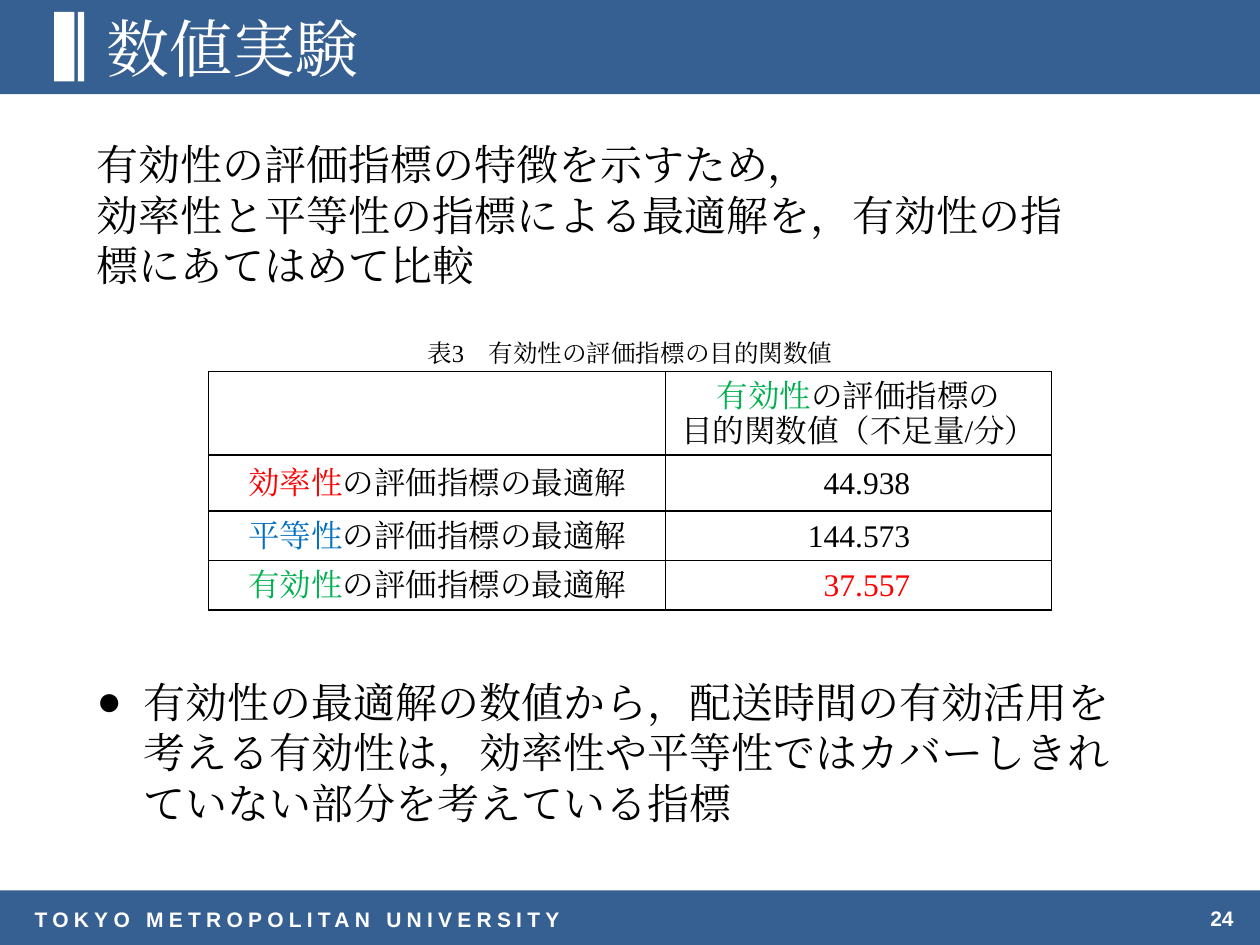
from dataclasses import dataclass
from typing import Optional

from lxml.etree import SubElement as Sub
from pptx import Presentation
from pptx.dml.color import RGBColor as Rgb
from pptx.enum.shapes import MSO_SHAPE as Shape
from pptx.enum.text import MSO_ANCHOR as Anchor, PP_ALIGN as Align
from pptx.oxml.ns import qn
from pptx.util import Cm, Pt


@dataclass(frozen=True)
class Theme:
    navy: str = "376092"
    white: str = "FFFFFF"
    black: str = "000000"
    red: str = "FF0000"
    blue: str = "0070C0"
    green: str = "00B050"
    serif: str = "Times New Roman"
    sans: str = "Arial"
    title: int = 36
    body: int = 24
    cell: int = 18
    note: int = 14
    foot: int = 12


@dataclass(frozen=True)
class Box:
    left: float
    top: float
    width: float
    height: float

    def dims(self) -> tuple:
        return Cm(self.left), Cm(self.top), Cm(self.width), Cm(self.height)


@dataclass(frozen=True)
class Run:
    text: str
    color: str


@dataclass(frozen=True)
class Style:
    size: int
    face: str
    bold: bool = False
    align: Align = Align.LEFT
    track: int = 0
    bullet: Optional[str] = None


@dataclass(frozen=True)
class Label:
    box: Box
    lines: list
    style: Style
    anchor: Anchor = Anchor.TOP
    inset: float = 0.25


T = Theme()


def apply(item, **values) -> None:
    for name, value in values.items():
        setattr(item, name, value)


def write(frame, lines: list, style: Style) -> None:
    for i, line in enumerate(lines):
        para = frame.paragraphs[0] if i == 0 else frame.add_paragraph()
        para.alignment = style.align
        if style.bullet:
            props = para._p.get_or_add_pPr()
            props.set("marL", str(Cm(0.95)))
            props.set("indent", str(-Cm(0.95)))
            Sub(props, qn("a:buFont"), typeface=style.face)
            Sub(props, qn("a:buChar"), char=style.bullet)
        for part in line:
            run = para.add_run()
            run.text = part.text
            apply(run.font, size=Pt(style.size), name=style.face, bold=style.bold)
            run.font.color.rgb = Rgb.from_string(part.color)
            props = run._r.get_or_add_rPr()
            Sub(props, qn("a:ea"), typeface=style.face)
            if style.track:
                props.set("spc", str(style.track))


def draw_bar(slide, box: Box, color: str) -> None:
    bar = slide.shapes.add_shape(Shape.RECTANGLE, *box.dims())
    bar.shadow.inherit = False
    bar.fill.solid()
    bar.fill.fore_color.rgb = Rgb.from_string(color)
    bar.line.fill.background()


def draw_label(slide, label: Label) -> None:
    frame = slide.shapes.add_textbox(*label.box.dims()).text_frame
    apply(frame, word_wrap=True, vertical_anchor=label.anchor,
          margin_left=Cm(label.inset))
    write(frame, label.lines, label.style)


def edge(cell) -> None:
    props = cell._tc.get_or_add_tcPr()
    for i, side in enumerate(("lnL", "lnR", "lnT", "lnB")):
        line = props.makeelement(qn(f"a:{side}"), {"w": str(Pt(1))})
        props.insert(i, line)
        fill = Sub(line, qn("a:solidFill"))
        Sub(fill, qn("a:srgbClr"), val=T.black)


def draw_table(slide, box: Box, cols: list, rows: list, data: list) -> None:
    grid = slide.shapes.add_table(len(rows), len(cols), *box.dims()).table
    apply(grid, first_row=False, horz_banding=False)
    for col, width in zip(grid.columns, cols):
        col.width = Cm(width)
    for r, (row, height) in enumerate(zip(grid.rows, rows)):
        row.height = Cm(height)
        for c, cell in enumerate(row.cells):
            # Figures share one right edge inside their column
            figure = r > 0 and c == 1
            apply(cell, vertical_anchor=Anchor.MIDDLE, margin_left=Cm(0.03),
                  margin_top=Cm(0.03), margin_bottom=0,
                  margin_right=Cm(2.85 if figure else 0.03))
            cell.fill.background()
            edge(cell)
            align = Align.RIGHT if figure else Align.CENTER
            write(cell.text_frame, data[r][c], Style(T.cell, T.serif, align=align))


# Content
HEAD = [[Run("有効性", T.green), Run("の評価指標の", T.black)],
        [Run("目的関数値（不足量/分）", T.black)]]
SCORES = [("効率性", T.red, "44.938", T.black),
          ("平等性", T.blue, "144.573", T.black),
          ("有効性", T.green, "37.557", T.red)]
DATA = [[[], HEAD]] + [
    [[[Run(name, hue), Run("の評価指標の最適解", T.black)]], [[Run(score, tone)]]]
    for name, hue, score, tone in SCORES]

BARS = [(Box(0, 17.95, 25.4, 1.1), T.navy), (Box(0, 0, 25.4, 1.9), T.navy),
        (Box(1.09, 0.24, 0.41, 1.4), T.white), (Box(1.57, 0.24, 0.13, 1.4), T.white)]

LABELS = [
    Label(Box(0, 18.14, 12.9, 0.76),
          [[Run("TOKYO METROPOLITAN UNIVERSITY", T.white)]],
          Style(T.foot, T.sans, bold=True, track=300), Anchor.MIDDLE, 0.7),
    Label(Box(21.9, 17.95, 3.22, 1.1), [[Run("24", T.white)]],
          Style(T.foot, T.sans, bold=True, align=Align.RIGHT), Anchor.MIDDLE),
    Label(Box(1.9, 0, 23.5, 1.9), [[Run("数値実験", T.white)]],
          Style(T.title, T.serif), Anchor.MIDDLE),
    Label(Box(8.1, 6.68, 9.2, 0.86),
          [[Run("表3　有効性の評価指標の目的関数値", T.black)]],
          Style(T.note, T.serif, align=Align.CENTER)),
    Label(Box(1.7, 2.67, 20.22, 3.33),
          [[Run("有効性の評価指標の特徴を示すため，", T.black)],
           [Run("効率性と平等性の指標による最適解を，有効性の指標にあてはめて比較", T.black)]],
          Style(T.body, T.serif)),
    Label(Box(1.7, 13.51, 21, 3.33),
          [[Run("有効性の最適解の数値から，配送時間の有効活用を考える有効性は，"
                "効率性や平等性ではカバーしきれていない部分を考えている指標", T.black)]],
          Style(T.body, T.serif, bullet="●")),
]


def main() -> None:
    deck = Presentation()
    apply(deck, slide_width=Cm(25.4), slide_height=Cm(19.05))
    slide = deck.slides.add_slide(deck.slide_layouts[6])

    # Header and footer bands
    for box, color in BARS:
        draw_bar(slide, box, color)

    # Table of objective values
    draw_table(slide, Box(4.2, 7.49, 17, 4.8), [9.22, 7.78],
               [1.68, 1.13, 1, 1], DATA)

    # Title, body and footer text
    for label in LABELS:
        draw_label(slide, label)
    deck.save("out.pptx")


if __name__ == "__main__":
    main()
